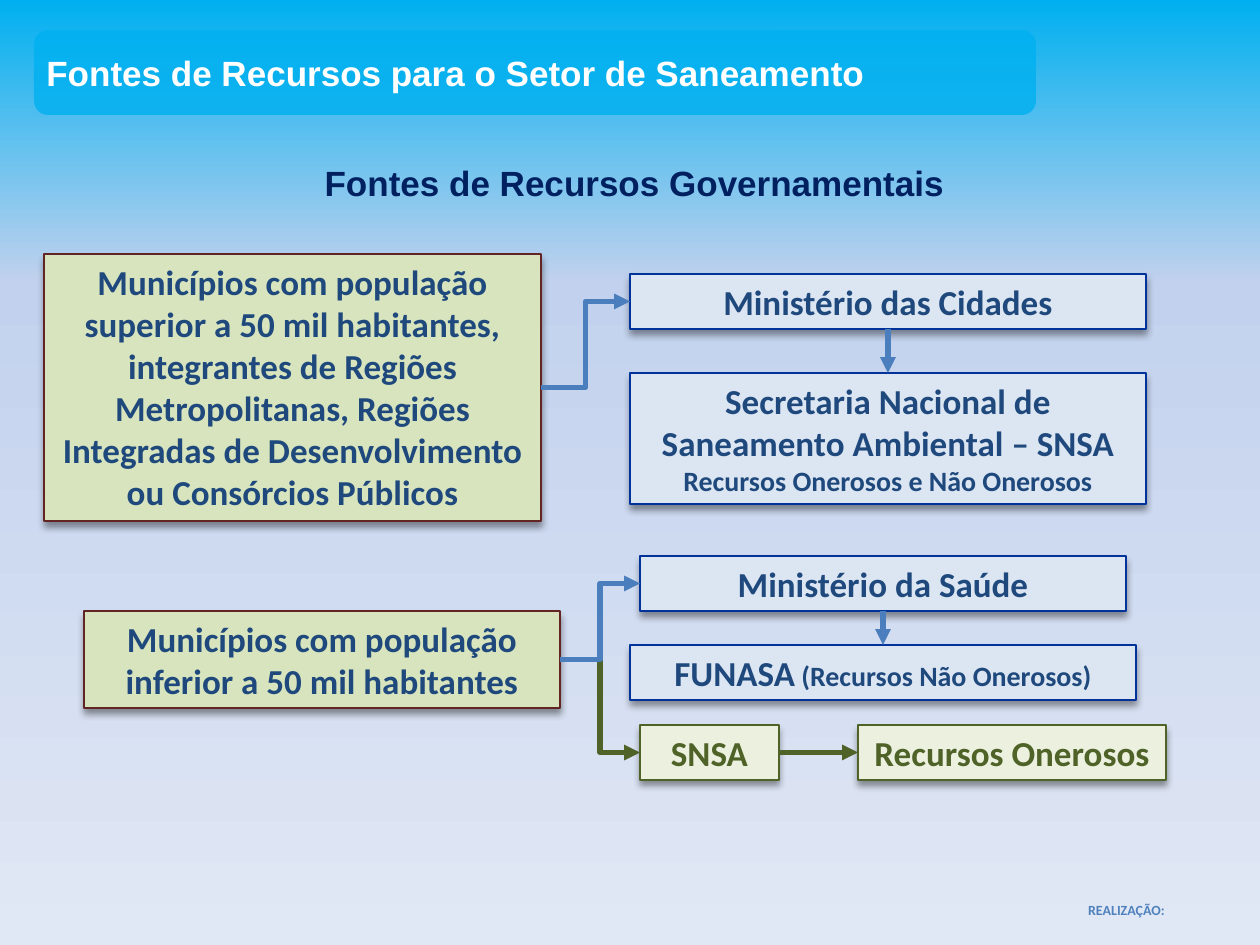
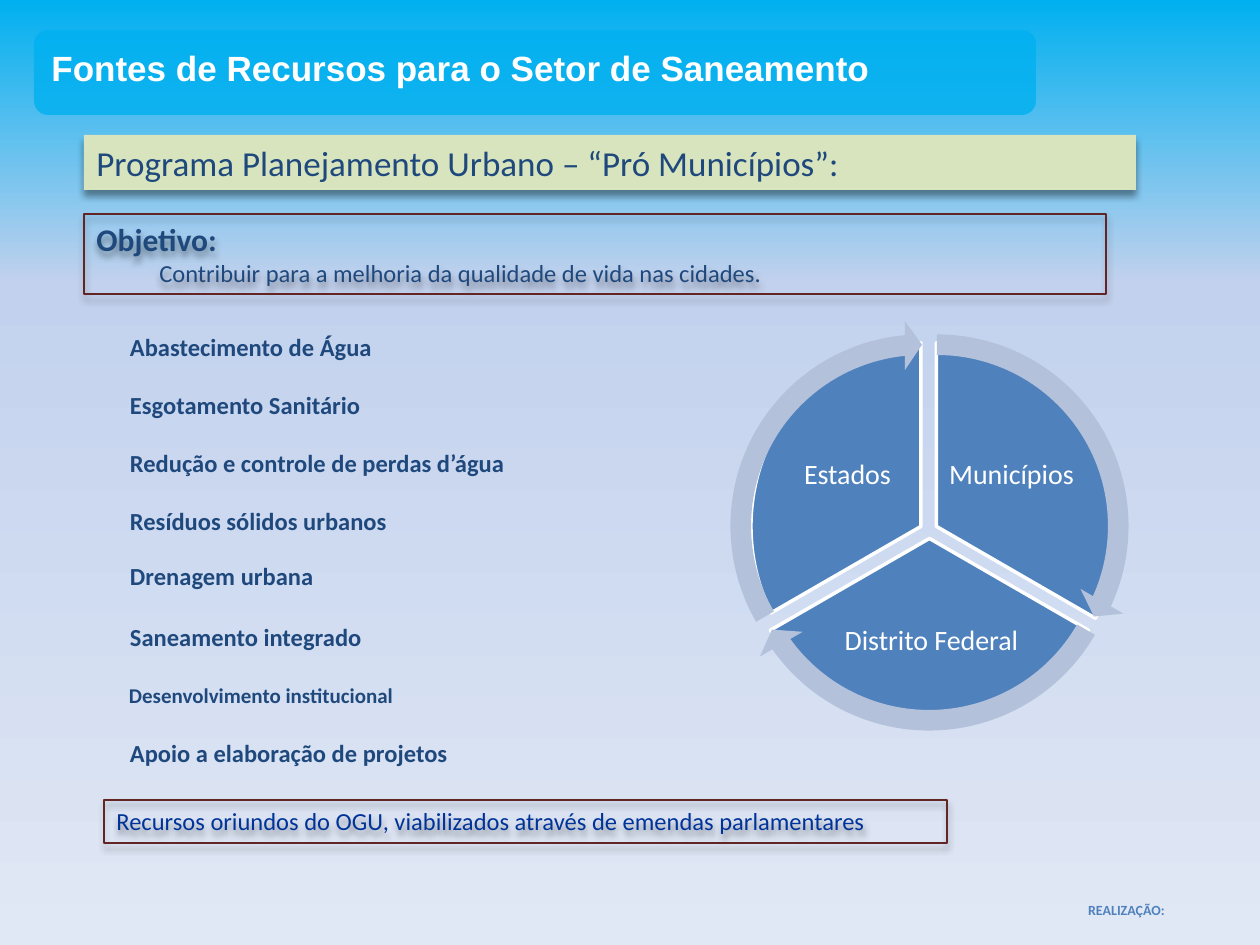
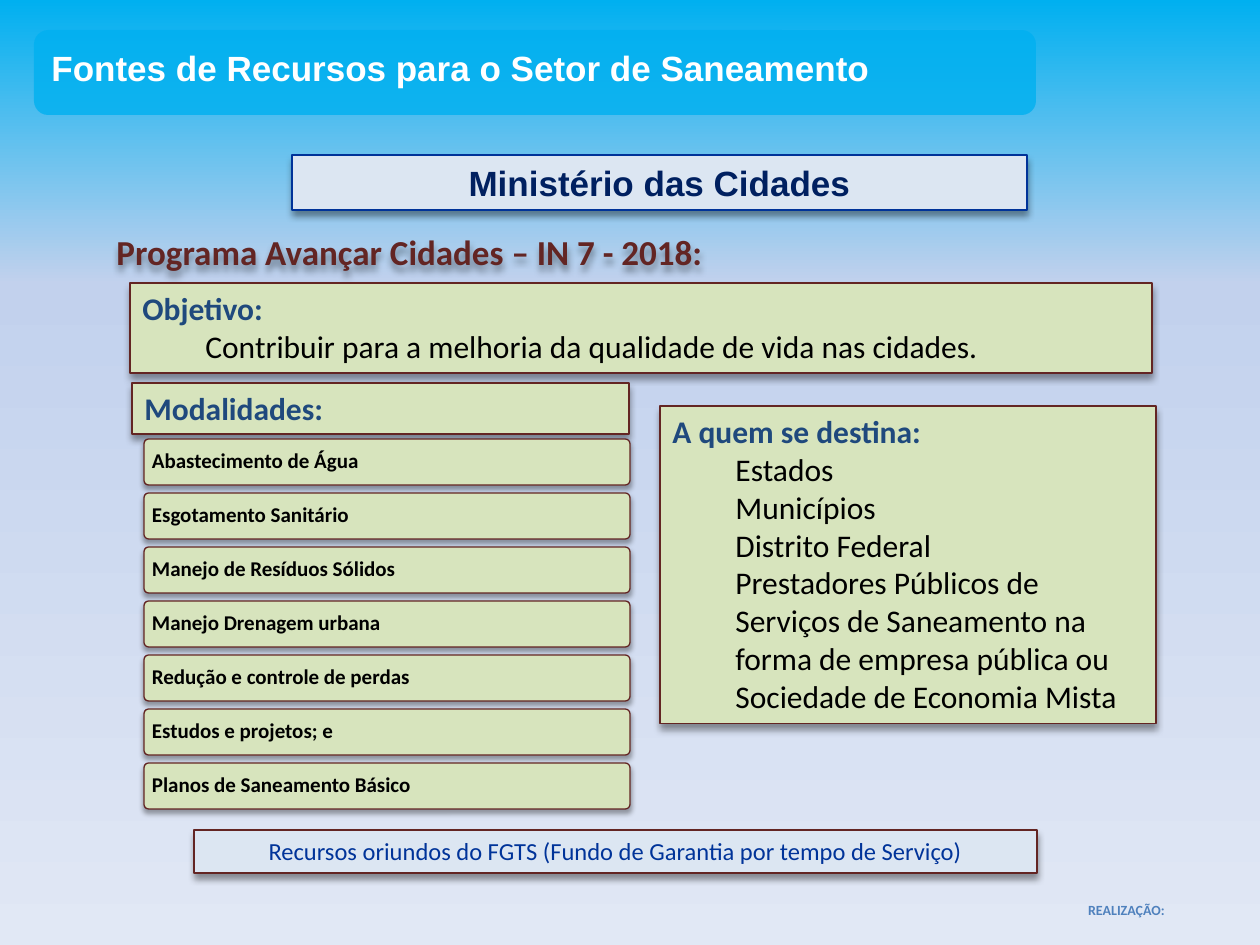
import copy
from dataclasses import dataclass
from typing import Any, Optional

import lxml.etree
import pptx
import pptx.dml.color
import pptx.enum.dml
import pptx.enum.shapes
import pptx.enum.text
import pptx.oxml.ns
import pptx.util

SCALE = 914400 / 126
SKY, NAVY, INK, BLUE = "00B0F0", "1F497D", "002060", "003399"
GREEN, PALE, ICE = "D7E4BD", "EBF1DE", "DCE6F2"
WINE, MOSS, STEEL, GRAY = "632523", "4F6228", "4B7EBC", "B3C1DB"
MID, WHITE, BLACK = "4F81BD", "FFFFFF", "000000"

FORM = pptx.enum.shapes.MSO_SHAPE
LINK = pptx.enum.shapes.MSO_CONNECTOR
ALIGN = pptx.enum.text.PP_ALIGN
ANCHOR = pptx.enum.text.MSO_ANCHOR
TOP, LEFT, BASE, RIGHT = range(4)


@dataclass(frozen=True)
class Shade:
    alpha: int = 40
    blur: float = 4
    drop: float = 3


@dataclass(frozen=True)
class Box:
    left: int
    top: int
    wide: int
    high: int
    fill: Optional[str] = None
    line: Optional[str] = None
    weight: float = 0.75
    shade: Optional[Shade] = None
    form: Any = None
    adjust: tuple[float, ...] = ()
    pad: Optional[int] = None


@dataclass(frozen=True)
class Wedge:
    text: str
    pie: tuple[int, int, int, int]
    ends: tuple[float, float]
    label: tuple[int, int, int, int]
    ring: tuple[int, int]
    turn: tuple[float, float]


def px(count: int) -> pptx.util.Emu:
    return pptx.util.Emu(round(count * SCALE))


def tint(code: str) -> pptx.dml.color.RGBColor:
    return pptx.dml.color.RGBColor.from_string(code)


def add_tag(parent: Any, tag: str, **marks: Any) -> Any:
    child = lxml.etree.SubElement(parent, pptx.oxml.ns.qn(tag))
    for name, value in marks.items():
        child.set(name, str(value))
    return child


def find(parent: Any, tag: str) -> Any:
    return parent.find(".//" + pptx.oxml.ns.qn(tag))


def write(frame: Any, text: str, *, size: int = 20, face: str = "Calibri",
          color: str = NAVY, bold: bool = True, align: Any = ALIGN.LEFT,
          indent: int = 0, lead: Optional[float] = None, join: bool = False) -> None:
    para = frame.paragraphs[-1]
    if para.runs and not join:
        para = frame.add_paragraph()
    if not join:
        para.alignment = align
        para.line_spacing = lead
        if indent:
            para._p.get_or_add_pPr().set("marL", str(px(indent)))
    run = para.add_run()
    run.text = text
    font = run.font
    font.size, font.name, font.bold = pptx.util.Pt(size), face, bold
    font.color.rgb = tint(color)


def draw(slide: Any, box: Box) -> Any:
    place = [px(n) for n in (box.left, box.top, box.wide, box.high)]
    if box.form is None:
        shape = slide.shapes.add_textbox(*place)
    else:
        shape = slide.shapes.add_shape(box.form, *place)
    for index, value in enumerate(box.adjust):
        shape.adjustments[index] = value
    if box.fill:
        shape.fill.solid()
        shape.fill.fore_color.rgb = tint(box.fill)
    else:
        shape.fill.background()
    if box.line:
        shape.line.color.rgb = tint(box.line)
        shape.line.width = pptx.util.Pt(box.weight)
    else:
        shape.line.fill.background()
    shape.shadow.inherit = False
    if box.shade:
        cast = add_tag(find(shape.element, "a:effectLst"), "a:outerShdw",
                       blurRad=round(box.shade.blur * 12700),
                       dist=round(box.shade.drop * 12700),
                       dir=5400000, algn="t", rotWithShape=0)
        hue = add_tag(cast, "a:srgbClr", val=BLACK)
        add_tag(hue, "a:alpha", val=box.shade.alpha * 1000)
    frame = shape.text_frame
    frame.word_wrap = True
    frame.vertical_anchor = ANCHOR.TOP if box.pad is None else ANCHOR.MIDDLE
    if box.pad is not None:
        frame.margin_left = frame.margin_right = px(box.pad)
        frame.margin_top = frame.margin_bottom = px(box.pad)
    return shape


def label(slide: Any, box: Box, text: str, **style: Any) -> Any:
    shape = draw(slide, box)
    write(shape.text_frame, text, **style)
    return shape


def card(left: int, top: int, wide: int, high: int, fill: Optional[str] = GREEN,
         line: Optional[str] = WINE, weight: float = 0.75) -> Box:
    return Box(left, top, wide, high, fill, line, weight, Shade(), FORM.RECTANGLE)


def arrow(slide: Any, start: Any, end: Any, sites: tuple[int, int] = (RIGHT, LEFT),
          color: str = STEEL, kind: Any = LINK.STRAIGHT) -> None:
    wire = slide.shapes.add_connector(kind, 0, 0, 0, 0)
    wire.begin_connect(start, sites[0])
    wire.end_connect(end, sites[1])
    wire.line.color.rgb = tint(color)
    wire.line.width = pptx.util.Pt(3)
    add_tag(wire.line._get_or_add_ln(), "a:tailEnd", type="triangle")
    add_tag(find(wire.element, "p:spPr"), "a:effectLst")


def paint(master: Any) -> None:
    fill = master.background.fill
    fill.gradient()
    fill.gradient_angle = 270
    stops = find(master.element, "a:gsLst")
    stops.append(copy.deepcopy(stops[-1]))
    shades = ((0, SKY), (0.3, "C2D1ED"), (1, "E1E8F5"))
    for stop, (spot, color) in zip(fill.gradient_stops, shades):
        stop.position = spot
        stop.color.rgb = tint(color)


def start(deck: Any, left: int = 39, top: int = 40) -> Any:
    slide = deck.slides.add_slide(deck.slide_layouts[6])
    band = draw(slide, Box(34, 30, 1002, 85, SKY, form=FORM.ROUNDED_RECTANGLE))
    add_tag(find(band.element, "a:srgbClr"), "a:alpha", val=80000)
    label(slide, Box(1066, 895, 121, 30), "REALIZAÇÃO:", size=8, color=MID,
          align=ALIGN.CENTER)
    label(slide, Box(left, top, 1003, 55),
          "Fontes de Recursos para o Setor de Saneamento", face="Arial", color=WHITE)
    return slide


def sources(deck: Any) -> None:
    slide = start(deck, 34, 45)
    mid = ALIGN.CENTER
    label(slide, Box(34, 155, 1201, 55), "Fontes de Recursos Governamentais",
          face="Arial", color=INK, align=mid)
    large = label(slide, card(44, 254, 497, 267, weight=1),
                  "Municípios com população superior a 50 mil habitantes, integrantes de "
                  "Regiões Metropolitanas, Regiões Integradas de Desenvolvimento ou "
                  "Consórcios Públicos", align=mid)
    small = label(slide, card(84, 611, 476, 97),
                  "Municípios com população inferior a 50 mil habitantes", align=mid)
    towns = label(slide, card(630, 274, 516, 55, ICE, BLUE),
                  "Ministério das Cidades", align=mid)
    health = label(slide, card(640, 556, 486, 55, ICE, BLUE),
                   "Ministério da Saúde", align=mid)
    office = label(slide, card(630, 373, 516, 131, ICE, BLUE),
                   "Secretaria Nacional de Saneamento Ambiental – SNSA", align=mid)
    write(office.text_frame, "Recursos Onerosos e Não Onerosos", size=16, align=mid)
    fund = label(slide, card(630, 645, 506, 55, ICE, BLUE), "FUNASA", align=mid)
    write(fund.text_frame, " (Recursos Não Onerosos)", size=16, join=True)
    branch = label(slide, card(640, 725, 139, 55, PALE, MOSS), "SNSA",
                   color=MOSS, align=mid)
    loans = label(slide, card(858, 725, 308, 55, PALE, MOSS), "Recursos Onerosos",
                  color=MOSS, align=mid)
    arrow(slide, large, towns, kind=LINK.ELBOW)
    arrow(slide, towns, office, (BASE, TOP))
    arrow(slide, health, fund, (BASE, TOP))
    arrow(slide, small, branch, color=MOSS, kind=LINK.ELBOW)
    arrow(slide, branch, loans, color=MOSS)
    arrow(slide, small, health, kind=LINK.ELBOW)


def planning(deck: Any) -> None:
    slide = start(deck)
    label(slide, card(84, 135, 1052, 55, line=None),
          "Programa Planejamento Urbano – “Pró Municípios”:", bold=False)
    goal = label(slide, card(84, 214, 1022, 80, None), "Objetivo:", size=18)
    write(goal.text_frame, "Contribuir para a melhoria da qualidade de vida nas cidades.",
          size=14, bold=False, indent=63)
    label(slide, card(104, 800, 843, 43, None),
          "Recursos oriundos do OGU, viabilizados através de emendas parlamentares",
          size=14, color=BLUE, bold=False)
    works = (
        ("Abastecimento de Água", 326, 14),
        ("Esgotamento Sanitário", 384, 14),
        ("Redução e controle de perdas d’água", 442, 14),
        ("Resíduos sólidos urbanos", 500, 14),
        ("Drenagem urbana", 555, 14),
        ("Saneamento integrado", 616, 14),
        ("Desenvolvimento institucional", 674, 12),
        ("Apoio a elaboração de projetos", 732, 14),
    )
    for text, top, size in works:
        label(slide, Box(123, top, 481, 45, pad=size // 2), text, size=size, lead=0.9)
    wedges = (
        Wedge("Municípios", (753, 343, 367, 367), (162, 18),
              (946, 420, 131, 110), (731, 320), (14.72, 161.99)),
        Wedge("Distrito Federal", (746, 355, 367, 367), (18, 90),
              (833, 593, 197, 96), (723, 333), (86.72, 18)),
        Wedge("Estados", (751, 343, 340, 367), (90, 162),
              (787, 420, 121, 110), (716, 320), (158.73, 90)),
    )
    for wedge in wedges:
        draw(slide, Box(*wedge.pie, MID, WHITE, 2, form=FORM.PIE, adjust=wedge.ends))
        label(slide, Box(*wedge.label, pad=2), wedge.text, size=16, color=WHITE,
              bold=False, align=ALIGN.CENTER, lead=0.9)
    for wedge in wedges:
        draw(slide, Box(*wedge.ring, 412, 412, GRAY, form=FORM.CIRCULAR_ARROW,
                        adjust=(0.05, 3.28, *wedge.turn, 0.06)))


def advance(deck: Any) -> None:
    slide = start(deck)
    label(slide, card(292, 155, 735, 55, ICE, BLUE), "Ministério das Cidades",
          face="Arial", color=INK, align=ALIGN.CENTER)
    label(slide, Box(104, 224, 1052, 55, shade=Shade()),
          "Programa Avançar Cidades – IN 7 - 2018:", color=WINE)
    goal = label(slide, card(130, 283, 1022, 90), "Objetivo:", size=18)
    write(goal.text_frame, "Contribuir para a melhoria da qualidade de vida nas cidades.",
          size=18, color=BLACK, bold=False, indent=63)
    label(slide, card(132, 383, 497, 51), "Modalidades:", size=18)
    users = label(slide, card(660, 406, 496, 318), "A quem se destina:", size=18)
    for text in ("Estados", "Municípios", "Distrito Federal",
                 "Prestadores Públicos de Serviços de Saneamento na forma de empresa "
                 "pública ou Sociedade de Economia Mista"):
        write(users.text_frame, text, size=18, color=BLACK, bold=False, indent=63)
    label(slide, card(194, 830, 843, 43, ICE),
          "Recursos oriundos do FGTS (Fundo de Garantia por tempo de Serviço)",
          size=14, color=BLUE, bold=False, align=ALIGN.CENTER)
    modes = ("Abastecimento de Água", "Esgotamento Sanitário", "Manejo de Resíduos Sólidos",
             "Manejo Drenagem urbana", "Redução e controle de perdas",
             "Estudos e projetos; e", "Planos de Saneamento Básico")
    for index, text in enumerate(modes):
        top = 439 + 54 * index
        draw(slide, Box(144, top, 486, 46, GREEN, WINE, shade=Shade(35, 3.1, 1.8),
                        form=FORM.ROUNDED_RECTANGLE, adjust=(0.1,)))
        label(slide, Box(146, top + 2, 481, 42, pad=6), text, size=12, color=BLACK, lead=0.9)


def main() -> None:
    deck = pptx.Presentation()
    deck.slide_width, deck.slide_height = px(1260), px(945)
    paint(deck.slide_master)
    sources(deck)
    planning(deck)
    advance(deck)
    deck.save("out.pptx")


if __name__ == "__main__":
    main()
